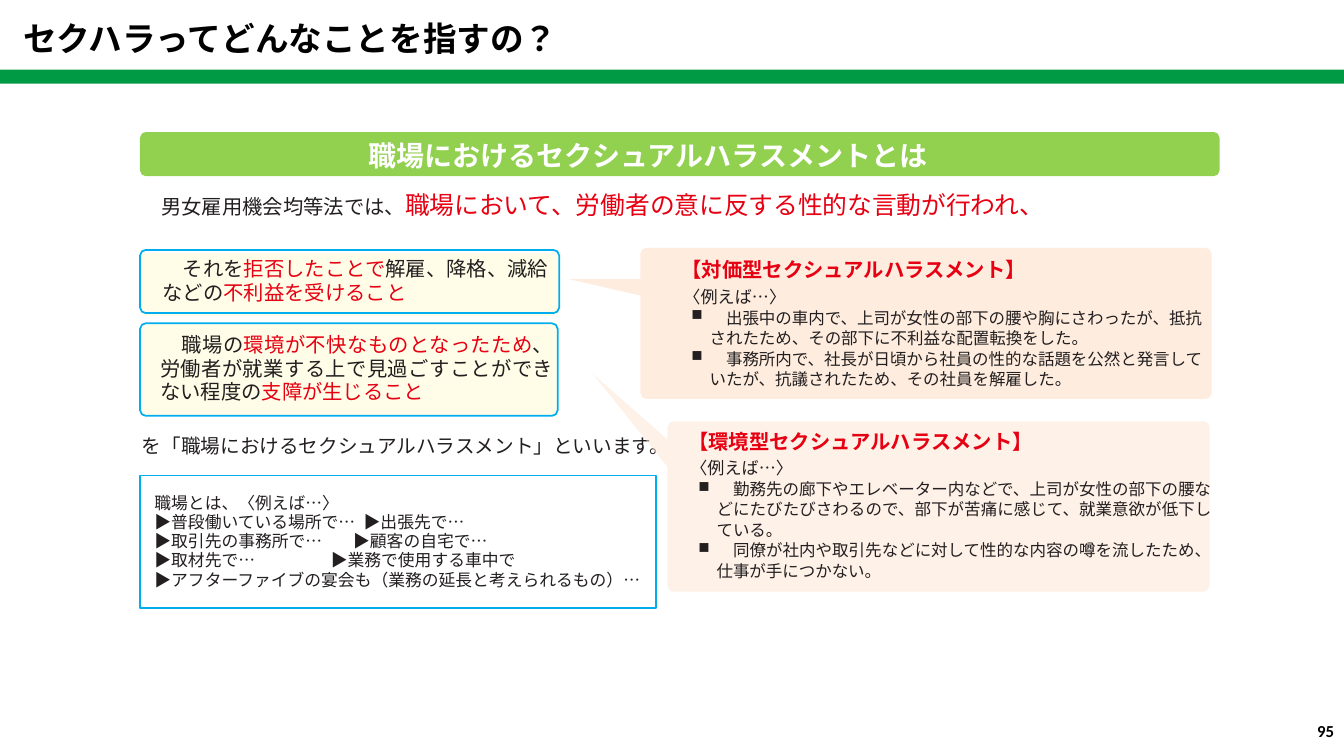
"""Build a slide that explains sexual harassment in the workplace."""
from lxml.etree import SubElement
from pptx import Presentation
from pptx.dml.color import RGBColor
from pptx.enum.lang import MSO_LANGUAGE_ID
from pptx.enum.shapes import MSO_SHAPE
from pptx.enum.text import PP_ALIGN
from pptx.oxml.ns import qn
from pptx.util import Pt

GREEN = RGBColor(0x00, 0x99, 0x44)
LIME = RGBColor(0x92, 0xD0, 0x50)
CREAM = RGBColor(0xFF, 0xFD, 0xE8)
PEACH = RGBColor(0xFE, 0xE6, 0xD3)
BLUE = RGBColor(0x00, 0xAE, 0xEF)
RED = RGBColor(0xE6, 0x00, 0x12)
INK = RGBColor(0x23, 0x1F, 0x20)
BLACK = RGBColor(0, 0, 0)
WHITE = RGBColor(0xFF, 0xFF, 0xFF)
FONT = "Noto Sans CJK JP"
CORNER = [(0, 9), (0, 4), (1.4, 1), (4, 0), (10, 0)]


def add_run(p, text, size=14.5, color=INK, bold=False, font=FONT):
    r = p.add_run()
    r.text = text
    r.font.size = Pt(size)
    r.font.bold = bold
    r.font.language_id = MSO_LANGUAGE_ID.JAPANESE
    r.font.color.rgb = color
    r.font.name = font
    SubElement(r.font._element, qn("a:ea"), typeface=font)


def add_text(s, x, y, w, h, top=2, sides=0):
    tf = s.shapes.add_textbox(Pt(x), Pt(y), Pt(w), Pt(h)).text_frame
    tf.word_wrap = True
    tf.margin_left = tf.margin_right = Pt(sides)
    tf.margin_top, tf.margin_bottom = Pt(top), 0
    return tf


def add_paragraph(tf, before=0, line=None, left=0, first=0, align=None, bullet=None, tab=None):
    p = tf.paragraphs[0]
    if p.runs:
        p = tf.add_paragraph()
    p.space_before = Pt(before)
    p.alignment = align
    if line:
        p.line_spacing = Pt(line)
    pPr = p._p.get_or_add_pPr()
    pPr.set("marL", str(Pt(left)))
    if first:
        pPr.set("indent", str(Pt(first)))
    if bullet:
        SubElement(pPr, qn("a:buSzPct"), val="92000")
        SubElement(pPr, qn("a:buChar"), char=bullet)
    if tab:
        tabs = SubElement(pPr, qn("a:tabLst"))
        SubElement(tabs, qn("a:tab"), pos=str(Pt(tab)), algn="l")
    return p


def paint(sp, fill=None, line=None, alpha=None):
    sp.shadow.inherit = False
    if fill is None:
        sp.fill.background()
    else:
        sp.fill.solid()
        sp.fill.fore_color.rgb = fill
    if alpha:
        color = sp._element.spPr.find(qn("a:solidFill"))[0]
        SubElement(color, qn("a:alpha"), val=str(alpha * 1000))
    if line is None:
        sp.line.fill.background()
    else:
        sp.line.color.rgb = line
        sp.line.width = Pt(1.25)


def add_rounded(s, x, y, w, h, tail=(), **style):
    points = [(x + dx, y + dy) for dx, dy in CORNER]
    points += [(x + w - dx, y + dy) for dx, dy in reversed(CORNER)]
    points += [(x + w - dx, y + h - dy) for dx, dy in CORNER]
    points += [(x + dx, y + h - dy) for dx, dy in reversed(CORNER)]
    points += [(x + dx, y + dy) for dx, dy in tail]
    points = [(Pt(px), Pt(py)) for px, py in points]
    builder = s.shapes.build_freeform(*points[0], scale=1.0)
    builder.add_line_segments(points[1:], close=True)
    paint(builder.convert_to_shape(), **style)


def add_rect(s, x, y, w, h, **style):
    sp = s.shapes.add_shape(MSO_SHAPE.RECTANGLE, Pt(x), Pt(y), Pt(w), Pt(h))
    paint(sp, **style)


def draw_header(s, x, y, w):
    add_rect(s, x, y + 49.8, w, 10, fill=GREEN)
    tf = add_text(s, x + 9.5, y + 9.4, 850, 36, top=3.6, sides=7.2)
    add_run(add_paragraph(tf), "セクハラってどんなことを指すの？", size=24, color=BLACK, bold=True)


def draw_definition(s, x, y, w, h):
    add_rounded(s, x, y, w, h, fill=LIME)
    tf = add_text(s, x, y - 3, 717, 66, top=7.2)
    p = add_paragraph(tf, before=14.8, left=8.6, align=PP_ALIGN.CENTER)
    add_run(p, "職場におけるセクシュアルハラスメントとは", size=20, color=WHITE, bold=True)
    p = add_paragraph(tf, before=12.8, left=0.7)
    add_run(p, "　男女雇用機会均等法では、")
    add_run(p, "職場において、労働者の意に反する性的な言動が行われ、", size=17.7, color=RED)


def draw_condition(s, x, y, w, h, runs, shift, text_box, **layout):
    dx, dy = shift
    add_rounded(s, x + dx, y + dy, w - dx, h, fill=CREAM)
    add_rounded(s, x, y, w, h, line=BLUE)
    tx, ty, tw, th = text_box
    tf = add_text(s, x + tx, y + ty, tw, th)
    p = add_paragraph(tf, before=2, line=16.9, **layout)
    for text, color in runs:
        add_run(p, text, color=color)


def draw_workplace(s, x, y, w, h):
    add_rect(s, x, y, w, h, line=BLUE)
    tf = add_text(s, x + 9.6, y + 11.4, 353, 72, top=0.9)
    add_run(add_paragraph(tf, before=1, left=0.7), "職場とは、〈例えば…〉", size=12)
    places = [
        ("▶普段働いている場所で…\t▶出張先で…", 149.5),
        ("▶取引先の事務所で…\t▶顧客の自宅で…", 142),
        ("▶取材先で…\t▶業務で使用する車中で", 126),
        ("▶アフターファイブの宴会も（業務の延長と考えられるもの）…", None),
    ]
    for text, tab in places:
        add_run(add_paragraph(tf, before=1, line=12.7, left=0.7, tab=tab), text, size=12)


def draw_conclusion(s, x, y, w, h):
    p = add_paragraph(add_text(s, x, y, w, h), before=2.5, line=13.5, left=1.4)
    add_run(p, "を「職場におけるセクシュアルハラスメント」といいます。", size=14)


def draw_callout(s, x, y, w, h, heading, examples, tail, alpha, text_box, align=None):
    add_rounded(s, x, y, w, h, tail=tail, fill=PEACH, alpha=alpha)
    tx, ty, tw, th = text_box
    tf = add_text(s, x + tx, y + ty, tw, th, top=4.7)
    add_run(add_paragraph(tf, before=4.5, left=0.7), heading, color=RED, bold=True)
    p = add_paragraph(tf, before=3.1, line=14.6, left=2.2)
    add_run(p, "〈例えば…〉", size=12.2)
    for text in examples:
        p = add_paragraph(tf, before=0.1, line=14.6, left=20.9, first=-13, align=align, bullet="■")
        add_run(p, text, size=11.8)


def draw_page_number(s, x, y, w, h):
    p = add_paragraph(add_text(s, x, y, w, h, top=3.6, sides=7.2), align=PP_ALIGN.RIGHT)
    add_run(p, "95", size=12, color=BLACK, bold=True, font="Calibri")


def main():
    prs = Presentation()
    prs.slide_width, prs.slide_height = Pt(960), Pt(540)
    s = prs.slides.add_slide(prs.slide_layouts[6])
    draw_condition(
        s, 100, 178.6, 299.5, 45,
        [("　それを", INK), ("拒否したことで", RED),
         ("解雇、降格、減給などの", INK), ("不利益を受けること", RED)],
        shift=(0, 2), text_box=(3, 2.8, 295, 37), left=13)
    draw_condition(
        s, 100, 231, 298.4, 66,
        [("　職場の", INK), ("環境が不快なものとなったため", RED),
         ("、労働者が就業する上で見過ごすことができない程度の", INK),
         ("支障が生じること", RED)],
        shift=(2, 0), text_box=(2.2, 4.8, 293, 53),
        left=12.2, first=0.7, align=PP_ALIGN.JUSTIFY)
    draw_workplace(s, 100, 339.6, 368.6, 94.8)
    draw_conclusion(s, 100, 311, 380, 17)
    draw_callout(
        s, 457.4, 177.1, 408, 107.8, "【対価型セクシュアルハラスメント】",
        ["　出張中の車内で、上司が女性の部下の腰や胸にさわったが、抵抗されたため、その部下に不利益な配置転換をした。",
         "　事務所内で、社長が日頃から社員の性的な話題を公然と発言していたが、抗議されたため、その社員を解雇した。"],
        tail=[(0, 34), (-51, 22.3), (0, 22.3)], alpha=71, text_box=(28.6, 2.2, 378, 101))
    draw_callout(
        s, 476.8, 301, 387.2, 121.6, "【環境型セクシュアルハラスメント】",
        ["　勤務先の廊下やエレベーター内などで、上司が女性の部下の腰などにたびたびさわるので、部下が苦痛に感じて、就業意欲が低下している。",
         "　同僚が社内や取引先などに対して性的な内容の噂を流したため、仕事が手につかない。"],
        tail=[(0, 32.4), (-53.4, -34), (0, 13)], alpha=52, text_box=(14.2, 0.7, 374.4, 116),
        align=PP_ALIGN.JUSTIFY)
    draw_definition(s, 100, 94.4, 771.2, 31.4)
    draw_header(s, 0, 0, 960)
    draw_page_number(s, 736, 511, 224, 29)
    prs.save("out.pptx")


if __name__ == "__main__":
    main()
